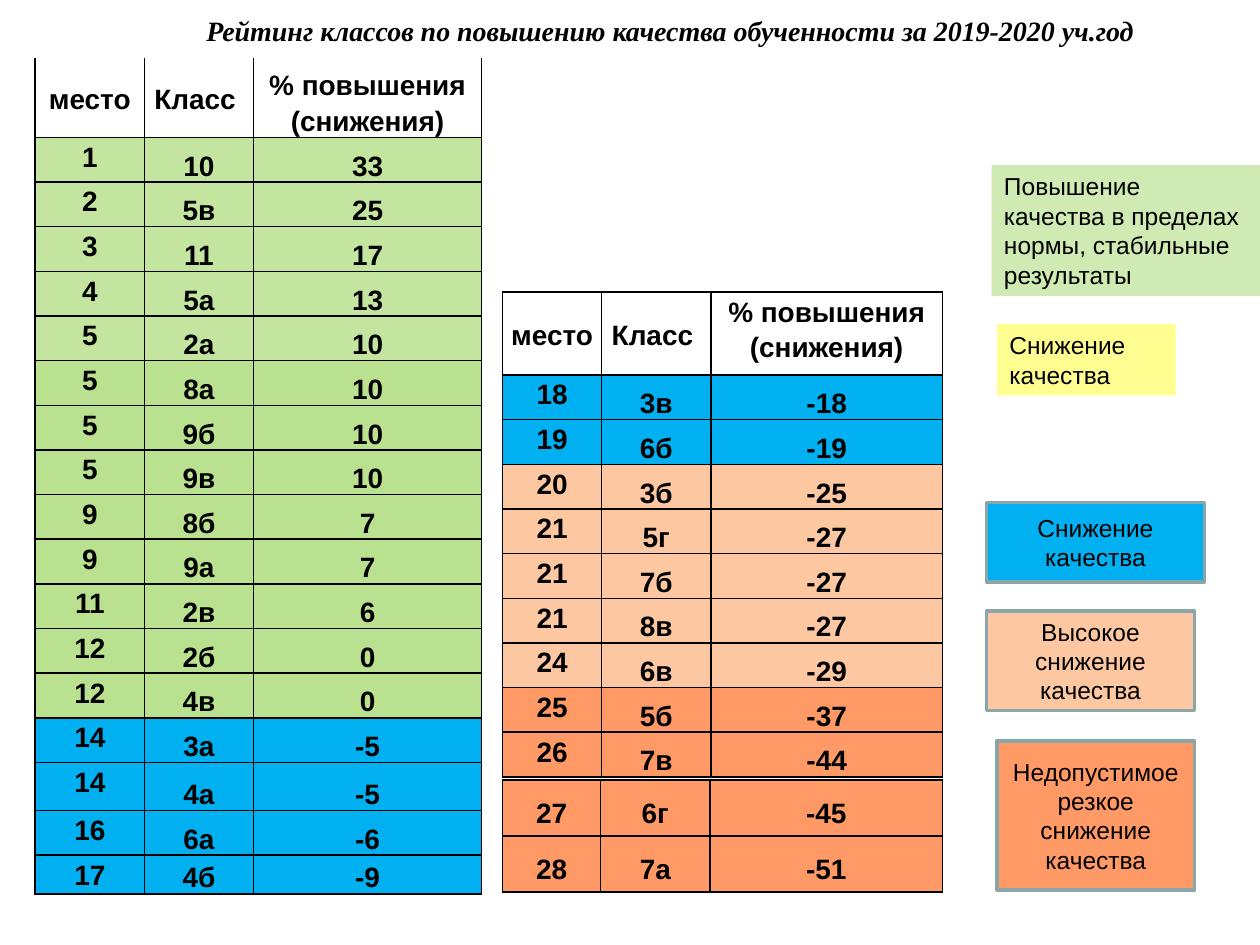
from dataclasses import dataclass

from pptx import Presentation
from pptx import util as u
from pptx.dml.color import RGBColor
from pptx.enum import shapes, text
from pptx.oxml.ns import qn
from pptx.oxml.xmlchemy import OxmlElement

COLORS = {
    "black": "000000",
    "white": "FFFFFF",
    "green": "92D050",
    "stable": "BAE18F",
    "yellow": "FFFF00",
    "blue": "00B0F0",
    "peach": "FDC8A1",
    "orange": "FF9966",
    "outline": "8AA6A8",
}
TOP, MIDDLE, BOTTOM = text.MSO_ANCHOR.TOP, text.MSO_ANCHOR.MIDDLE, text.MSO_ANCHOR.BOTTOM
ROW = 0.9


@dataclass(frozen=True)
class CellStyle:
    anchor: text.MSO_ANCHOR
    side: float
    above: float = 0
    below: float = 0
    spacing: float | None = None


@dataclass(frozen=True)
class Band:
    color: str | None
    styles: tuple[CellStyle, ...]
    rows: tuple[tuple[str, str, str], ...]
    opacity: int = 100
    sides: str = "LRTB"


@dataclass(frozen=True)
class Rating:
    left: float
    top: float
    widths: tuple[float, ...]
    heights: tuple[float, ...]
    bands: tuple[Band, ...]


@dataclass(frozen=True)
class Legend:
    label: str
    left: float
    top: float
    width: float
    height: float
    color: str
    opacity: int = 100
    framed: bool = True


HEAD = CellStyle(MIDDLE, 0.1, spacing=1.15)
HEAD_TOP = CellStyle(TOP, 0.1, spacing=1.15)
HEAD_BOTTOM = CellStyle(BOTTOM, 0.1, spacing=1.15)
PLACE = CellStyle(TOP, 0.18, spacing=1.15)
RESULT = CellStyle(BOTTOM, 0.02, above=0.02)
LAST = CellStyle(BOTTOM, 0.25, above=0.13, below=0.13)
BODY = (PLACE, RESULT, RESULT)
HEADINGS = (("место", "Класс ", "% повышения (снижения)"),)

RATINGS = (
    Rating(10.13, 5.89, (2.0, 2.2, 4.67), (1.67, *[ROW] * 9), (
        Band(None, (HEAD, HEAD, HEAD_TOP), HEADINGS),
        Band("blue", BODY, (("18", "3в", "-18"), ("19", "6б", "-19"))),
        Band("peach", BODY, (
            ("20", "3б", "-25"), ("21", "5г", "-27"), ("21", "7б", "-27"),
            ("21", "8в", "-27"), ("24", "6в", "-29"))),
        Band("orange", BODY, (("25", "5б", "-37"), ("26", "7в", "-44"))),
    )),
    Rating(0.71, 1.17, (2.2, 2.2, 4.6), (1.6, *[ROW] * 14, 0.97, ROW, 0.77), (
        Band("white", (HEAD, HEAD, HEAD_BOTTOM), HEADINGS, sides="LRB"),
        Band("green", BODY, (
            ("1", "10", "33"), ("2", "5в", "25"), ("3", "11", "17"),
            ("4", "5а", "13"), ("5", "2а", "10")), opacity=54),
        Band("stable", BODY, (
            ("5", "8а", "10"), ("5", "9б", "10"), ("5", "9в", "10"),
            ("9", "8б", "7"), ("9", "9а", "7"), ("11", "2в", "6"),
            ("12", "2б", "0"), ("12", "4в", "0"))),
        Band("blue", BODY, (
            ("14", "3а", "-5"), ("14", "4а", "-5"),
            ("16", "6а", "-6"), ("17", "4б", "-9"))),
    )),
    Rating(10.13, 15.72, (1.98, 2.2, 4.69), (1.13, 1.13), (
        Band("orange", (LAST, LAST, LAST), (("27", "6г", "-45"), ("28", "7а", "-51"))),
    )),
)

LEGENDS = (
    Legend("Повышение качества в пределах нормы, стабильные результаты",
           19.99, 3.33, 5.41, 2.64, "green", 44, False),
    Legend("Снижение качества", 20.1, 6.53, 3.6, 1.44, "yellow", 43, False),
    Legend("Высокое снижение качества", 19.89, 12.32, 4.19, 2.0, "peach"),
    Legend("Недопустимое резкое снижение качества", 20.1, 14.94, 3.98, 3.0, "orange"),
    Legend("Снижение качества", 19.89, 10.13, 4.39, 1.6, "blue"),
)


def rgb(name: str) -> RGBColor:
    return RGBColor.from_string(COLORS[name])


def paint(fill, properties, color: str | None, opacity: int) -> None:
    if color is None:
        fill.background()
        return
    fill.solid()
    fill.fore_color.rgb = rgb(color)
    if opacity < 100:
        alpha = OxmlElement("a:alpha")
        alpha.set("val", str(opacity * 1000))
        properties.find(qn("a:solidFill"))[0].append(alpha)


def set_font(paragraph, size: int, family: str = "Arial", bold: bool = False) -> None:
    font = paragraph.font
    font.size, font.name, font.bold = u.Pt(size), family, bold
    font.color.rgb = rgb("black")


def add_borders(properties, sides: str) -> None:
    for side in "LRTB":
        border = OxmlElement(f"a:ln{side}")
        border.set("w", str(u.Pt(1)))
        if side in sides:
            solid, color = OxmlElement("a:solidFill"), OxmlElement("a:srgbClr")
            color.set("val", COLORS["black"])
            solid.append(color)
            border.append(solid)
        else:
            border.append(OxmlElement("a:noFill"))
        properties.append(border)


def fill_cell(cell, value: str, style: CellStyle, band: Band) -> None:
    cell.text = value
    cell.vertical_anchor = style.anchor
    cell.margin_left = cell.margin_right = u.Cm(style.side)
    cell.margin_top, cell.margin_bottom = u.Cm(style.above), u.Cm(style.below)
    paragraph = cell.text_frame.paragraphs[0]
    paragraph.alignment = text.PP_ALIGN.CENTER
    paragraph.line_spacing = style.spacing
    set_font(paragraph, 16, bold=True)
    properties = cell._tc.get_or_add_tcPr()
    add_borders(properties, band.sides)
    paint(cell.fill, properties, band.color, band.opacity)


def add_rating(slide, rating: Rating) -> None:
    table = slide.shapes.add_table(
        len(rating.heights), len(rating.widths), u.Cm(rating.left), u.Cm(rating.top),
        u.Cm(sum(rating.widths)), u.Cm(sum(rating.heights))).table
    table.first_row = table.horz_banding = False
    for column, width in zip(table.columns, rating.widths):
        column.width = u.Cm(width)
    for row, height in zip(table.rows, rating.heights):
        row.height = u.Cm(height)
    entries = [(band, values) for band in rating.bands for values in band.rows]
    for row, (band, values) in zip(table.rows, entries):
        for cell, value, style in zip(row.cells, values, band.styles):
            fill_cell(cell, value, style, band)


def add_legend(slide, legend: Legend) -> None:
    box = slide.shapes.add_shape(
        shapes.MSO_SHAPE.RECTANGLE, u.Cm(legend.left), u.Cm(legend.top),
        u.Cm(legend.width), u.Cm(legend.height))
    box.shadow.inherit = False
    paint(box.fill, box._element.spPr, legend.color, legend.opacity)
    if legend.framed:
        box.line.color.rgb = rgb("outline")
        box.line.width = u.Pt(2)
    else:
        box.line.fill.background()
    frame = box.text_frame
    frame.word_wrap = True
    frame.text = legend.label
    frame.vertical_anchor = MIDDLE if legend.framed else TOP
    paragraph = frame.paragraphs[0]
    paragraph.alignment = text.PP_ALIGN.CENTER if legend.framed else text.PP_ALIGN.LEFT
    set_font(paragraph, 14)


def add_title(slide) -> None:
    frame = slide.shapes.add_textbox(u.Cm(3.91), u.Cm(0.1), u.Cm(19.81), u.Cm(1.7)).text_frame
    frame.word_wrap = True
    frame.margin_top = u.Cm(0.18)
    frame.text = "Рейтинг классов по повышению качества обученности за 2019-2020 уч.год"
    heading = frame.paragraphs[0]
    set_font(heading, 16, "Times New Roman", bold=True)
    heading.font.italic = True


def main() -> None:
    deck = Presentation()
    deck.slide_width, deck.slide_height = u.Cm(25.4), u.Cm(19.05)
    slide = deck.slides.add_slide(deck.slide_layouts[6])
    add_title(slide)
    for rating in RATINGS:
        add_rating(slide, rating)
    for legend in LEGENDS:
        add_legend(slide, legend)
    deck.save("out.pptx")


if __name__ == "__main__":
    main()
